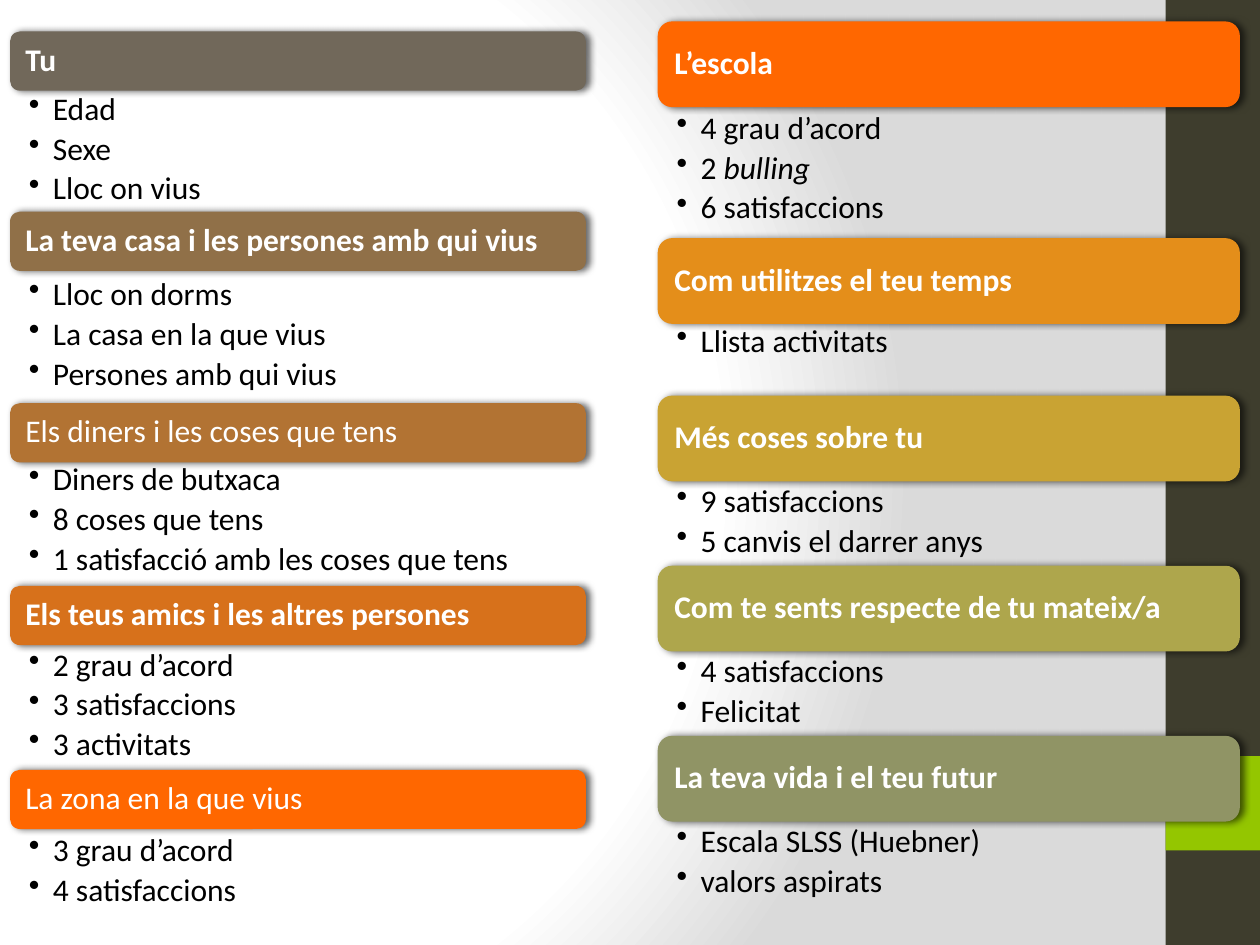
from dataclasses import dataclass

from pptx import Presentation
from pptx.dml.color import RGBColor
from pptx.enum.shapes import MSO_SHAPE
from pptx.enum.text import MSO_ANCHOR, PP_ALIGN
from pptx.oxml import parse_xml
from pptx.oxml.ns import nsdecls
from pptx.util import Inches, Pt

RECTANGLE = MSO_SHAPE.RECTANGLE
ROUNDED = MSO_SHAPE.ROUNDED_RECTANGLE
MIDDLE = MSO_ANCHOR.MIDDLE
TOP = MSO_ANCHOR.TOP
LEFT = PP_ALIGN.LEFT


@dataclass(frozen=True)
class Theme:
    font: str = "Calibri"
    size: float = 18
    heading: str = "FFFFFF"
    body: str = "000000"
    side_bar: str = "3E3D2D"
    accent: str = "94C600"
    page: str = "FFFFFF"
    page_edge: str = "DADADA"
    shadow: str = "000000"


THEME = Theme()

# Section: heading top, list top, fill, bold heading, heading, list items
LEFT_SECTIONS = [
    (0.25, 0.71, "71685A", True, "Tu", ["Edad", "Sexe", "Lloc on vius"]),
    (1.68, 2.18, "907048", True, "La teva casa i les persones amb qui vius",
     ["Lloc on dorms", "La casa en la que vius", "Persones amb qui vius"]),
    (3.2, 3.65, "B27333", False, "Els diners i les coses que tens",
     ["Diners de butxaca", "8 coses que tens", "1 satisfacció amb les coses que tens"]),
    (4.65, 5.12, "D7711B", True, "Els teus amics i les altres persones",
     ["2 grau d’acord", "3 satisfaccions", "3 activitats"]),
    (6.11, 6.59, "FF6700", False, "La zona en la que vius",
     ["3 grau d’acord", "4 satisfaccions"]),
]
RIGHT_SECTIONS = [
    (0.17, 0.86, "FF6700", True, "L’escola",
     ["4 grau d’acord", ("2 ", "bulling"), "6 satisfaccions"]),
    (1.89, 2.55, "E48E1A", True, "Com utilitzes el teu temps", ["Llista activitats"]),
    (3.14, 3.82, "C9A333", True, "Més coses sobre tu",
     ["9 satisfaccions", "5 canvis el darrer anys"]),
    (4.49, 5.17, "AEA64C", True, "Com te sents respecte de tu mateix/a",
     ["4 satisfaccions", "Felicitat"]),
    (5.84, 6.52, "909465", True, "La teva vida i el teu futur",
     ["Escala SLSS (Huebner)", "valors aspirats"]),
]
# Column: left, width, heading height, sections
COLUMNS = [(0.08, 4.57, 0.47, LEFT_SECTIONS), (5.22, 4.62, 0.68, RIGHT_SECTIONS)]


def add_block(shapes, kind, left, top, width, height, fill):
    shape = shapes.add_shape(kind, Inches(left), Inches(top), Inches(width), Inches(height))
    shape.shadow.inherit = False
    shape.fill.solid()
    shape.fill.fore_color.rgb = RGBColor.from_string(fill)
    shape.line.fill.background()
    return shape


def add_run(paragraph, text, color, bold=False, italic=False):
    run = paragraph.add_run()
    run.text = text
    run.font.name = THEME.font
    run.font.size = Pt(THEME.size)
    run.font.bold = bold
    run.font.italic = italic
    run.font.color.rgb = RGBColor.from_string(color)


presentation = Presentation()
presentation.slide_width = Inches(10)
presentation.slide_height = Inches(7.5)
slide = presentation.slides.add_slide(presentation.slide_layouts[6])

slide.element.cSld.insert(0, parse_xml(f"""
<p:bg {nsdecls("p", "a")}><p:bgPr><a:gradFill rotWithShape="1"><a:gsLst>
<a:gs pos="0"><a:srgbClr val="{THEME.page}"/></a:gs>
<a:gs pos="75000"><a:srgbClr val="{THEME.page}"/></a:gs>
<a:gs pos="100000"><a:srgbClr val="{THEME.page_edge}"/></a:gs></a:gsLst>
<a:path path="circle"><a:fillToRect l="20000" t="50000" r="100000" b="50000"/></a:path>
</a:gradFill><a:effectLst/></p:bgPr></p:bg>"""))

add_block(slide.shapes, RECTANGLE, 9.25, 0, 0.75, 7.5, THEME.side_bar)
add_block(slide.shapes, RECTANGLE, 9.25, 6, 0.75, 0.75, THEME.accent)

for left, width, heading_height, sections in COLUMNS:
    shapes = slide.shapes.add_group_shape().shapes
    for heading_top, list_top, fill, bold, title, items in sections:
        heading = add_block(shapes, ROUNDED, left, heading_top, width, heading_height, fill)
        effects = heading.element.spPr.find("{*}effectLst")
        effects.append(parse_xml(
            f'<a:outerShdw {nsdecls("a")} blurRad="{Pt(4)}" dist="{Pt(2)}" dir="0">'
            f'<a:srgbClr val="{THEME.shadow}"><a:alpha val="60000"/></a:srgbClr>'
            '</a:outerShdw>'))
        frame = heading.text_frame
        frame.word_wrap = True
        frame.vertical_anchor = MIDDLE
        frame.margin_left = frame.margin_right = Inches(0.1)
        frame.margin_top = frame.margin_bottom = Inches(0.07)
        paragraph = frame.paragraphs[0]
        paragraph.alignment = LEFT
        paragraph.line_spacing = 0.9
        add_run(paragraph, title, THEME.heading, bold=bold)

        text_box = shapes.add_textbox(Inches(left), Inches(list_top),
                                      Inches(width), Inches(len(items) / 3))
        frame = text_box.text_frame
        frame.word_wrap = True
        frame.vertical_anchor = TOP
        frame.margin_left, frame.margin_right = Inches(0.15), Inches(0.14)
        frame.margin_top = frame.margin_bottom = Inches(0.03)
        for index, item in enumerate(items):
            paragraph = frame.add_paragraph() if index else frame.paragraphs[0]
            paragraph.level = 1
            paragraph.alignment = LEFT
            paragraph.line_spacing = 0.9
            paragraph.space_after = Pt(3.3)
            properties = paragraph._p.get_or_add_pPr()
            properties.set("marL", str(Inches(0.19)))
            properties.set("indent", str(Inches(-0.19)))
            properties.append(parse_xml(f'<a:buChar {nsdecls("a")} char="•"/>'))
            plain, emphasis = (item, "") if isinstance(item, str) else item
            add_run(paragraph, plain, THEME.body)
            if emphasis:
                add_run(paragraph, emphasis, THEME.body, italic=True)

presentation.save("out.pptx")
